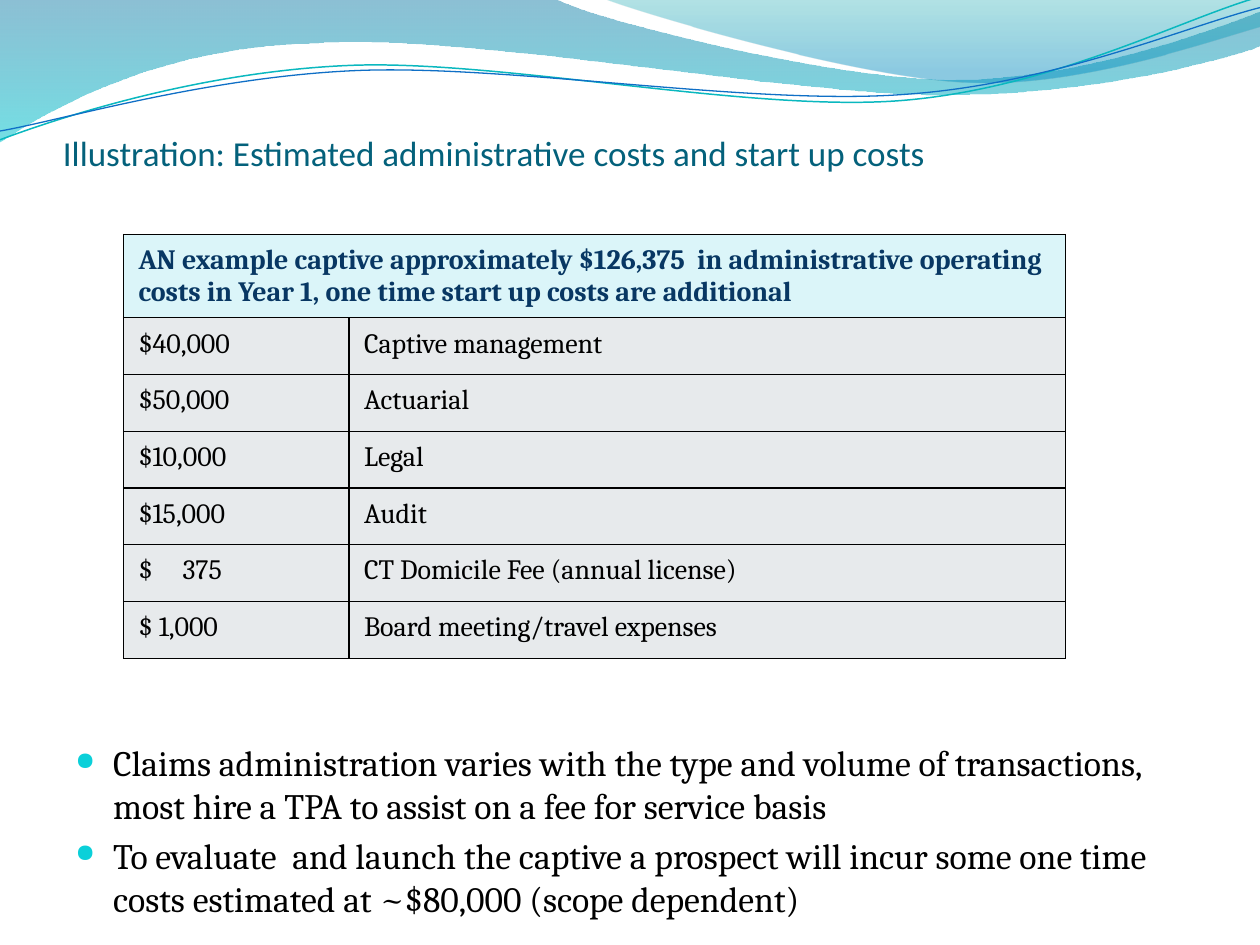
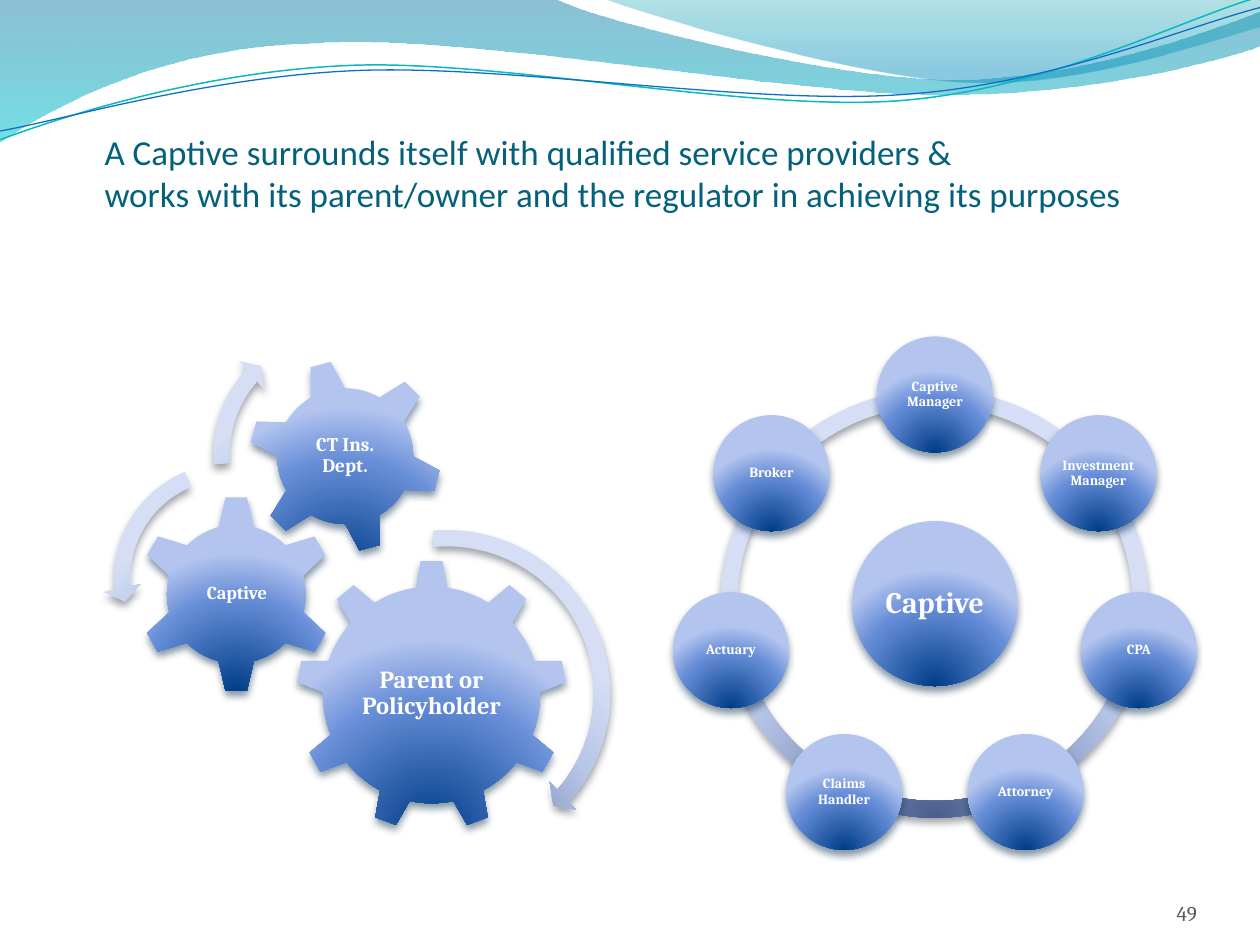
import math
from pptx import Presentation
from pptx import util as u
from pptx.dml.color import RGBColor
from pptx.enum import shapes, text
from pptx.oxml import parse_xml
from pptx.oxml.ns import nsdecls, qn

rgb = RGBColor.from_string
In = u.Inches
MSO = shapes.MSO_SHAPE
NS = nsdecls("a")

HEADING, BODY = "Calibri", "Cambria"
TEAL, BLACK, WHITE, NAVY, GREY = "04617B", "000000", "FFFFFF", "083763", "595959"
DOWN = '<a:lin ang="5400000" scaled="1"/>'
GLOW = ('<a:path path="circle"><a:fillToRect l="50000" t="130000" '
        'r="50000" b="-30000"/></a:path>')
BLUE = [(0, "003D87", 100), (68, "668DD7", 100), (100, "B3C4EF", 100)]
PALE = [(0, "4A5F8F", 100), (68, "B7C5E7", 100), (100, "D5DEF5", 100)]
BLUE_SHADOW, PALE_SHADOW = "042747", "3C414F"


def paint(sp, stops, direction, shadow=None):
    """Give a gradient of (position, colour, opacity) stops and an optional soft shadow."""
    gs = "".join(
        f'<a:gs pos="{pos * 1000}"><a:srgbClr val="{c}"><a:alpha val="{alpha * 1000}"/>'
        f'</a:srgbClr></a:gs>' for pos, c, alpha in stops)
    sp.fill.gradient()
    spPr = sp._element.spPr
    spPr.replace(spPr.find(qn("a:gradFill")), parse_xml(
        f'<a:gradFill {NS} rotWithShape="1"><a:gsLst>{gs}</a:gsLst>{direction}</a:gradFill>'))
    sp.line.fill.background()
    sp.shadow.inherit = False
    if shadow:
        spPr.find(qn("a:effectLst")).append(parse_xml(
            f'<a:outerShdw {NS} blurRad="57150" dist="38100" dir="5400000" rotWithShape="0">'
            f'<a:srgbClr val="{shadow}"><a:alpha val="48000"/></a:srgbClr></a:outerShdw>'))


def write(tf, lines, size, color, font=BODY, bold=False, align="LEFT", anchor="MIDDLE",
          margins=(0.02, 0.02, 0.02, 0.02), spacing=None):
    tf.word_wrap = True
    tf.vertical_anchor = text.MSO_ANCHOR[anchor]
    tf.margin_left, tf.margin_top, tf.margin_right, tf.margin_bottom = map(In, margins)
    tf.text = "\n".join(lines)
    for p in tf.paragraphs:
        p.alignment = text.PP_ALIGN[align]
        p.line_spacing = spacing
        p.font.name, p.font.size, p.font.bold = font, u.Pt(size), bold
        p.font.color.rgb = rgb(color)


prs = Presentation()
prs.slide_width, prs.slide_height = In(10), In(7.5)

# Each wave: box, rotation, start, then lines (x, y) and curves (two handles, end point)
waves = [
    ((-0.01, -0.01, 10.02, 1.14), 0, (0, 0),
     [(4.4, -0.01), (4.76, 0.17, 6.64, 0.63, 7.58, 0.63),
      (8.53, 0.63, 9.58, 0.26, 10, 0.09), (10.01, 0.36),
      (9.83, 0.44, 8.7, 0.76, 7.46, 0.75), (6.22, 0.75, 3.82, 0.28, 2.57, 0.34),
      (1.29, 0.36, 0.46, 0.83, -0.01, 1.13), (0, 0)],
     [(0, "0074A1", 45), (100, "00C6CF", 55)], None),
    ((4.79, -0.01, 5.21, 0.7), 0, (4.79, -0.01),
     [(5.09, 0.11, 6.82, 0.62, 7.69, 0.65), (8.56, 0.69, 9.61, 0.32, 10, 0.21),
      (10, 0), (4.79, -0.01)],
     [(0, "00A1A9", 30), (80, "008BBF", 45)], None),
    ((-0.02, 0.22, 10.02, 0.71), 357.3, (0, 1.11),
     [(0.48, 0.93, 1.58, 0.57, 2.77, 0.52), (3.95, 0.47, 5.93, 0.89, 7.13, 0.8),
      (8.33, 0.71, 9.38, 0.15, 9.98, -0.02)], None, ("0AB8BF", 0.85)),
    ((-0.02, 0.3, 10.03, 0.58), 357.3, (0, 1.04),
     [(0.47, 0.96, 1.64, 0.61, 2.83, 0.56), (4.03, 0.51, 5.97, 0.84, 7.17, 0.75),
      (8.36, 0.67, 9.41, 0.21, 10, 0.06)], None, ("0F6FC6", 0.75)),
]
titles = [
    ("Illustration: Estimated administrative costs and start up costs", (0.5, 0.13, 9, 1.25)),
    ("A Captive surrounds itself with qualified service providers &\v"
     "works with its parent/owner and the regulator in achieving its purposes",
     (0.83, 0.36, 9, 1.34)),
]
for title, title_box in titles:
    s = prs.slides.add_slide(prs.slide_layouts[6])
    for (x, y, w, h), rotation, start, segments, stops, line in waves:
        fb = s.shapes.build_freeform(In(start[0]), In(start[1]))
        fb.add_line_segments([(In(seg[-2]), In(seg[-1])) for seg in segments],
                             close=stops is not None)
        sp = fb.convert_to_shape()
        sp.left, sp.top, sp.width, sp.height = map(In, (x, y, w, h))
        sp.rotation = rotation

        # Redraw the outline with curves, in the unrotated frame of the box
        cos, sin = math.cos(math.radians(-rotation)), math.sin(math.radians(-rotation))
        cx, cy = x + w / 2, y + h / 2
        outline = ""
        for i, seg in enumerate([start, *segments]):
            tag = "moveTo" if i == 0 else "lnTo" if len(seg) == 2 else "cubicBezTo"
            pts = ""
            for px, py in zip(seg[::2], seg[1::2]):
                dx, dy = px - cx, py - cy
                pts += (f'<a:pt x="{In(dx * cos - dy * sin + w / 2)}" '
                        f'y="{In(dx * sin + dy * cos + h / 2)}"/>')
            outline += f"<a:{tag}>{pts}</a:{tag}>"
        if stops:
            outline += "<a:close/>"
        paths = sp._element.spPr.find(qn("a:custGeom")).find(qn("a:pathLst"))
        paths.replace(paths[0], parse_xml(
            f'<a:path {NS} w="{In(w)}" h="{In(h)}">{outline}</a:path>'))

        if stops:
            paint(sp, stops, DOWN)
        else:
            sp.fill.background()
            sp.shadow.inherit = False
            sp.line.color.rgb, sp.line.width = rgb(line[0]), u.Pt(line[1])
    tb = s.shapes.add_textbox(*map(In, title_box))
    write(tb.text_frame, [title], 20, TEAL, HEADING, anchor="BOTTOM", margins=(0, 0.05, 0, 0))

costs_slide, providers_slide = prs.slides

# Costs: bullets and table
s = costs_slide
tb = s.shapes.add_textbox(In(0.5), In(5.83), In(9), In(1.5))
write(tb.text_frame, [
    "Claims administration varies with the type and volume of transactions, "
    "most hire a TPA to assist on a fee for service basis",
    "To evaluate  and launch the captive a prospect will incur some one time costs "
    "estimated at ~$80,000 (scope dependent)",
], 20.4, BLACK, anchor="TOP", margins=(0.1, 0.05, 0.1, 0.05))
bullet = ('<a:buClr {0}><a:srgbClr val="0BD0D9"/></a:buClr>', '<a:buSzPct {0} val="70000"/>',
          '<a:buChar {0} char="●"/>')
for p in tb.text_frame.paragraphs:
    p.space_before = u.Pt(4)
    pPr = p._p.get_or_add_pPr()
    pPr.set("marL", str(In(0.3)))
    pPr.set("indent", str(In(-0.3)))
    at = pPr.index(pPr.find(qn("a:defRPr")))
    for i, xml in enumerate(bullet):
        pPr.insert(at + i, parse_xml(xml.format(NS)))

costs = [
    ("AN example captive approximately $126,375  in administrative operating costs in Year 1, "
     "one time start up costs are additional", ""),
    ("$40,000", "Captive management"),
    ("$50,000", "Actuarial"),
    ("$10,000", "Legal"),
    ("$15,000", "Audit"),
    ("$\t375", "CT Domicile Fee (annual license)"),
    ("$ 1,000", "Board meeting/travel expenses"),
]
table = s.shapes.add_table(len(costs), 2, In(0.98), In(1.86), In(7.48), In(3.36)).table
table.first_row = table.horz_banding = False
table.columns[0].width, table.columns[1].width = In(1.79), In(5.69)
table.cell(0, 0).merge(table.cell(0, 1))
for r, row in enumerate(costs):
    header = r == 0
    table.rows[r].height = In(0.66 if header else 0.45)
    for c, value in enumerate(row):
        cell = table.cell(r, c)
        write(cell.text_frame, [value], 16, NAVY if header else BLACK, bold=header)
        cell.vertical_anchor = text.MSO_ANCHOR.TOP
        cell.margin_left = cell.margin_right = In(0.12)
        cell.margin_top, cell.margin_bottom = In(0.08), In(0.05)
        tcPr = cell._tc.get_or_add_tcPr()
        for side in ("lnL", "lnR", "lnT", "lnB"):
            tcPr.append(parse_xml(
                f'<a:{side} {NS} w="9525"><a:solidFill><a:srgbClr val="{BLACK}"/>'
                f'</a:solidFill></a:{side}>'))
        cell.fill.solid()
        cell.fill.fore_color.rgb = rgb("DBF5F9" if header else "E7EAEC")
        if "\t" in value:
            pPr = cell.text_frame.paragraphs[0]._p.get_or_add_pPr()
            pPr.insert(pPr.index(pPr.find(qn("a:defRPr"))), parse_xml(
                f'<a:tabLst {NS}><a:tab pos="{In(0.35)}" algn="l"/></a:tabLst>'))

# Providers: ring of circles around the captive
s = providers_slide
providers = ["Captive Manager", "Investment Manager", "CPA", "Attorney", "Claims Handler",
             "Actuary", "Broker"]
CX, CY, RING, ORBIT = 7.42, 4.79, 1.7, 1.66
FULL_TURN, TOP = 216, 162  # arc adjustments count 0.6 per degree
step = FULL_TURN / len(providers)
for i in range(len(providers)):
    sp = s.shapes.add_shape(MSO.BLOCK_ARC, In(CX - RING), In(CY - RING), In(2 * RING), In(2 * RING))
    end = TOP - i * step
    for k, value in enumerate([(end - step) % FULL_TURN, end % FULL_TURN, 0.039]):
        sp.adjustments[k] = value
    paint(sp, PALE, GLOW, PALE_SHADOW)

circles = [("Captive", CX, CY, 1.31, 17)]
for i, name in enumerate(providers):
    angle = 2 * math.pi * i / len(providers)
    circles.append((name, CX + ORBIT * math.sin(angle), CY - ORBIT * math.cos(angle), 0.92, 8))
for name, x, y, d, size in circles:
    sp = s.shapes.add_shape(MSO.OVAL, In(x - d / 2), In(y - d / 2), In(d), In(d))
    paint(sp, BLUE, GLOW, BLUE_SHADOW)
    write(sp.text_frame, [name], size, WHITE, bold=True, align="CENTER",
          margins=(0.01, 0.01, 0.01, 0.01), spacing=0.9)

tb = s.shapes.add_textbox(In(8.67), In(6.95), In(0.83), In(0.4))
write(tb.text_frame, ["49"], 12, GREY, align="RIGHT", anchor="BOTTOM", margins=(0, 0, 0, 0))

# Gears: kind, left, top, size, rotation, label, label box, font size
gears = [
    (MSO.GEAR_9, 2.35, 4.44, 2.15, 0, "Parent or Policyholder", (2.78, 4.95, 1.29, 1.11), 14),
    (MSO.GEAR_6, 1.09, 3.93, 1.57, 0, "Captive", (1.49, 4.33, 0.78, 0.77), 10.5),
    (MSO.GEAR_6, 1.97, 2.85, 1.54, 345, "CT Ins. Dept.", (2.31, 3.19, 0.86, 0.86), 11),
]
for kind, x, y, d, rotation, name, box, size in gears:
    sp = s.shapes.add_shape(kind, In(x), In(y), In(d), In(d))
    sp.rotation = rotation
    paint(sp, BLUE, GLOW, BLUE_SHADOW)
    tb = s.shapes.add_textbox(*map(In, box))
    write(tb.text_frame, [name], size, WHITE, bold=True, align="CENTER", spacing=0.9)

turns = [
    (MSO.CIRCULAR_ARROW, 2.17, 4.12, 2.76, (0.047, 2.99, 24.997, 158.973, 0.055)),
    (MSO.LEFT_CIRCULAR_ARROW, 0.82, 3.59, 2, (0.065, 4.3, 104.891, 148.378, 0.075)),
    (MSO.CIRCULAR_ARROW, 1.61, 2.52, 2.16, (0.06, 3.941, 133.138, 105.082, 0.07)),
]
for kind, x, y, d, adjustments in turns:
    sp = s.shapes.add_shape(kind, In(x), In(y), In(d), In(d))
    for k, value in enumerate(adjustments):
        sp.adjustments[k] = value
    paint(sp, PALE, GLOW, PALE_SHADOW)

prs.save("out.pptx")
